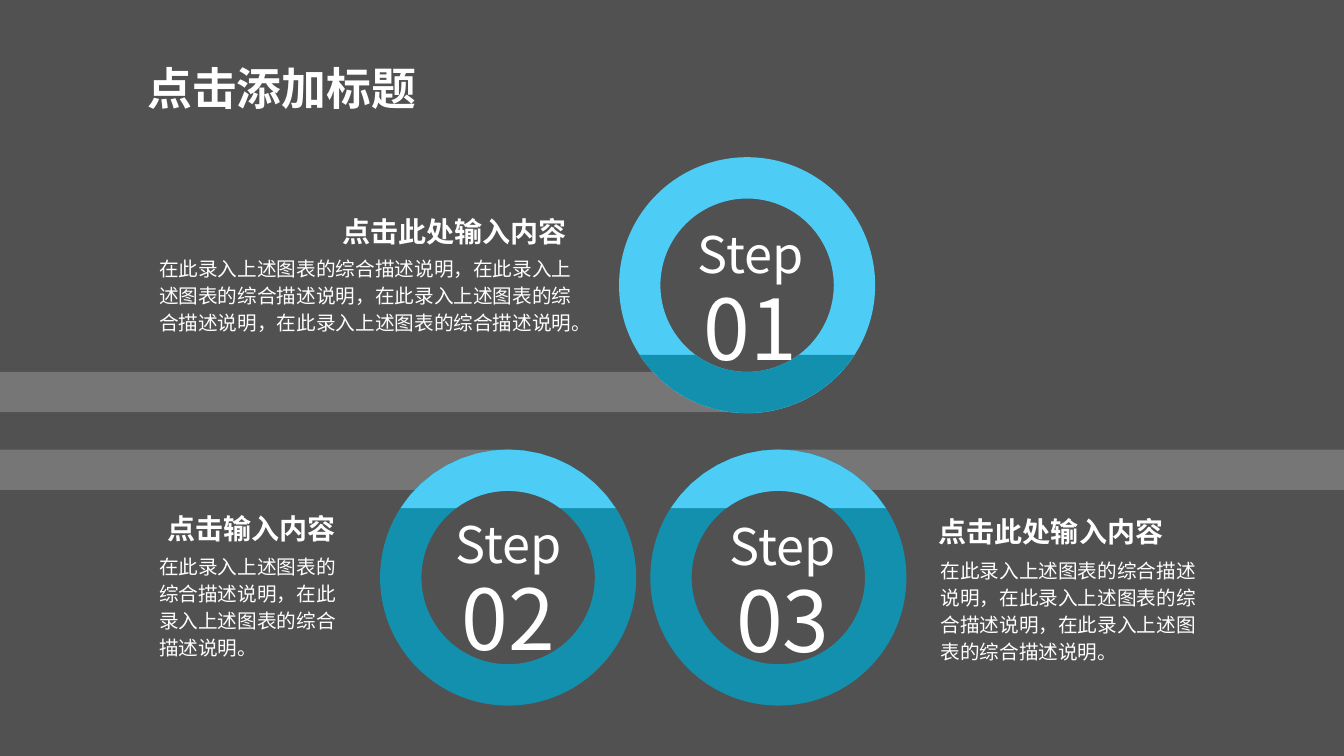
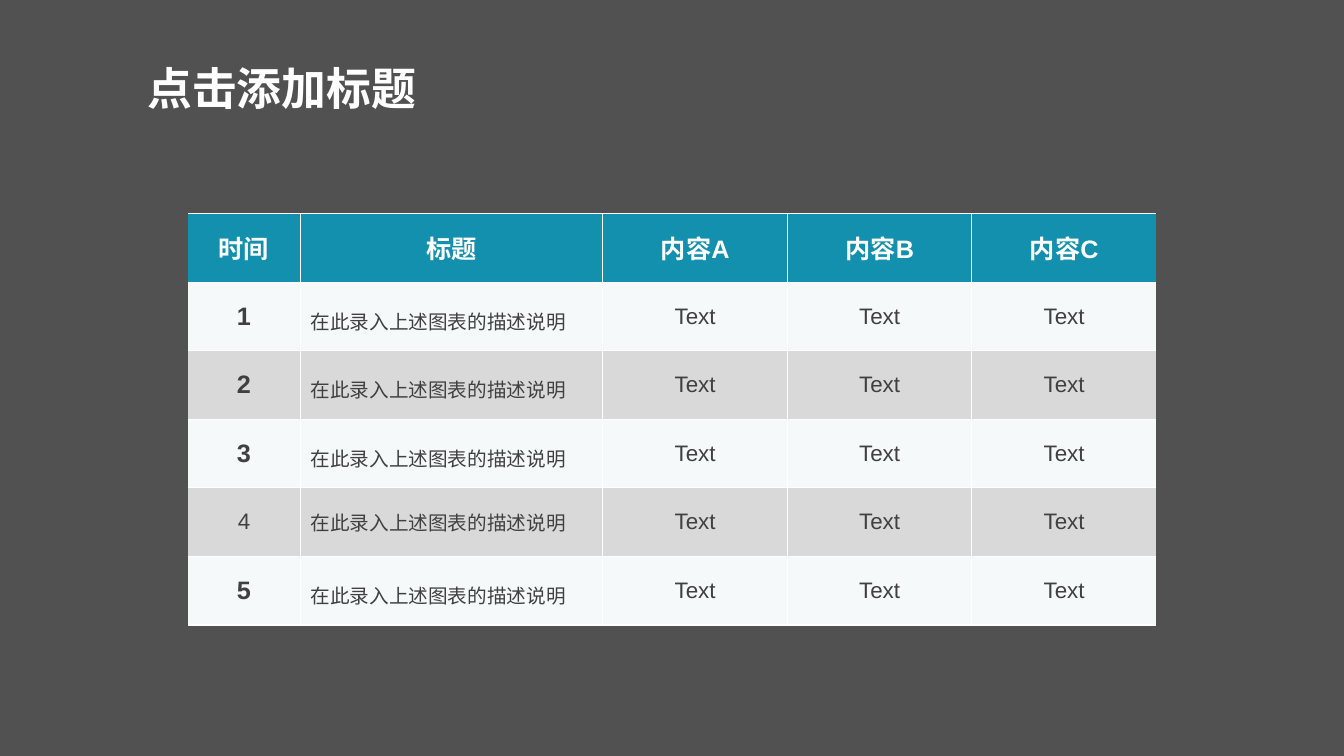
from dataclasses import dataclass
from math import asin, cos, degrees, radians, sin

from lxml import etree
from pptx import Presentation
from pptx.dml.color import RGBColor
from pptx.enum.shapes import MSO_SHAPE
from pptx.enum.text import MSO_ANCHOR, MSO_AUTO_SIZE, PP_ALIGN
from pptx.oxml.ns import qn
from pptx.util import Inches, Pt

RECT, DONUT = MSO_SHAPE.RECTANGLE, MSO_SHAPE.DONUT
LEFT, MID, RIGHT = PP_ALIGN.LEFT, PP_ALIGN.CENTER, PP_ALIGN.RIGHT
TOP, CENTRE = MSO_ANCHOR.TOP, MSO_ANCHOR.MIDDLE
FIXED = MSO_AUTO_SIZE.NONE


@dataclass(frozen=True)
class Theme:
    back: RGBColor = RGBColor.from_string("515151")
    band: RGBColor = RGBColor.from_string("808080")
    light: RGBColor = RGBColor.from_string("4DCDF5")
    dark: RGBColor = RGBColor.from_string("1390AD")
    white: RGBColor = RGBColor.from_string("FFFFFF")
    ink: RGBColor = RGBColor.from_string("404040")
    pale: RGBColor = RGBColor.from_string("F5F9F9")
    grey: RGBColor = RGBColor.from_string("D9D9D9")
    sans: str = "Arial"
    han: str = "Noto Sans CJK SC"
    title: Pt = Pt(32)
    head: Pt = Pt(20)
    body: Pt = Pt(14)
    word: Pt = Pt(36)
    digit: Pt = Pt(60)
    key: Pt = Pt(18)
    cell: Pt = Pt(16)


T = Theme()


def write(frame, lines, align=LEFT, color=T.white, anchor=TOP):
    """Fill a text frame; each line is (text, line spacing, font values)."""
    frame.vertical_anchor = anchor
    for i, (text, space, fmt) in enumerate(lines):
        para = frame.paragraphs[0] if i == 0 else frame.add_paragraph()
        para.alignment, para.line_spacing = align, space
        run = para.add_run()
        run.text = text
        run.font.color.rgb = color
        for name, value in fmt.items():
            setattr(run.font, name, value)
        asian = etree.SubElement(run.font._element, qn("a:ea"))
        asian.set("typeface", T.han)


def paint(shape, color):
    """Give a shape a flat fill with no line or shadow."""
    shape.shadow.inherit = False
    shape.fill.solid()
    shape.fill.fore_color.rgb = color
    shape.line.fill.background()


prs = Presentation()
prs.slide_width, prs.slide_height = Inches(13.33), Inches(7.5)

# Shared background, title place and title style
back = prs.slide_master.background.fill
back.solid()
back.fore_color.rgb = T.back
plain = prs.slide_layouts[5]
steps, grid = [prs.slides.add_slide(plain) for _ in range(2)]
for slide in (steps, grid):
    title = slide.shapes.title
    title.left, title.top = Inches(1.36), Inches(0.55)
    title.width, title.height = Inches(2.89), Inches(0.64)
    title.text_frame.word_wrap = False
    title.text_frame.auto_size = FIXED
    write(title.text_frame,
          [("点击添加标题", 1.0, dict(size=T.title, bold=True, name=T.sans))],
          anchor=CENTRE)

# Bands: left, top, width
for x, y, w in ((0, 3.69, 7.37), (0, 4.46, 5.03), (7.64, 4.46, 5.69)):
    band = steps.shapes.add_shape(RECT, Inches(x), Inches(y), Inches(w), Inches(0.4))
    paint(band, T.band)
    tint = band._element.spPr.find(".//" + qn("a:srgbClr"))
    etree.SubElement(tint, qn("a:alpha")).set("val", "80000")

# Rings with a cap beyond a level chord: centre, cap side, colours, label place
OUTER, INNER, CUT, PARTS = 1.27, 0.86, 0.69, 16
rings = (
    ("01", 7.41, 2.83, 1, T.light, T.dark, 6.81, 2.18),
    ("02", 5.04, 5.73, -1, T.dark, T.light, 4.41, 5.06),
    ("03", 7.72, 5.73, -1, T.dark, T.light, 7.13, 5.08),
)
for digits, x, y, side, main, tip, left, top in rings:
    ring = steps.shapes.add_shape(DONUT, Inches(x - OUTER), Inches(y - OUTER),
                                  Inches(2 * OUTER), Inches(2 * OUTER))
    ring.adjustments[0] = (OUTER - INNER) / (2 * OUTER)
    paint(ring, main)
    # Cap outline: along the outer arc, then back along the inner one
    points = []
    for radius, way in ((OUTER, 1), (INNER, -1)):
        first = degrees(asin(CUT / radius))
        sweep = 180 - 2 * first
        for i in range(PARTS + 1)[::way]:
            turn = radians(first + sweep * i / PARTS)
            points.append((Inches(x + radius * cos(turn)),
                           Inches(y + side * radius * sin(turn))))
    edge = steps.shapes.build_freeform(*points[0])
    edge.add_line_segments(points[1:], close=True)
    paint(edge.convert_to_shape(), tip)
    label = steps.shapes.add_textbox(Inches(left), Inches(top), Inches(1.27), Inches(1.56))
    label.text_frame.word_wrap = False
    write(label.text_frame,
          [("Step", Pt(42), dict(size=T.word, name=T.han)),
           (digits, Pt(67), dict(size=T.digit, name=T.han))], MID)

# Headings and descriptions beside the rings
HEAD = (Pt(26), dict(size=T.head, bold=True, name=T.han))
BODY = (Pt(19.3), dict(size=T.body, name=T.han))
LINE = "在此录入上述图表的综合描述说明"
notes = (
    ("点击此处输入内容", HEAD, RIGHT, 2.89, 2.05, 2.83, 0.44),
    ("，".join([LINE] * 4) + "。", BODY, LEFT, 1.48, 2.46, 4.34, 0.91),
    ("点击此处输入内容", HEAD, MID, 9.01, 5.03, 2.83, 0.44),
    ("，".join([LINE] * 3) + "。", BODY, LEFT, 9.23, 5.46, 2.83, 1.18),
    ("点击输入内容", HEAD, MID, 1.08, 5, 2.83, 0.44),
    ("，".join([LINE] * 2) + "。", BODY, LEFT, 1.48, 5.42, 2.03, 1.18),
)
for text, style, align, *place in notes:
    box = steps.shapes.add_textbox(*[Inches(v) for v in place])
    box.text_frame.word_wrap = True
    write(box.text_frame, [(text, *style)], align)

# Table
rows = [["时间", "标题", "内容A", "内容B", "内容C"]]
rows += [[str(n), "在此录入上述图表的描述说明"] + ["Text"] * 3 for n in range(1, 6)]
widths = (1.12, 3, 1.83, 1.83, 1.83)
table = grid.shapes.add_table(len(rows), len(widths), Inches(1.86), Inches(2.12),
                              Inches(sum(widths)), Inches(0.68 * len(rows))).table
table.horz_banding = False
for col, width in zip(table.columns, widths):
    col.width = Inches(width)
last, end = len(rows) - 1, len(widths) - 1
for r, row in enumerate(rows):
    table.rows[r].height = Inches(0.68)
    for c, text in enumerate(row):
        cell = table.cell(r, c)
        # Cell borders: opacity in percent, 0 for none
        edges = {"L": 30 if c else 0, "R": 30 if c < end else 0,
                 "T": 30 if r else 80, "B": 30 if r < last else 80}
        for edge, alpha in edges.items():
            line = etree.SubElement(cell._tc.get_or_add_tcPr(), qn("a:ln" + edge), w="12700")
            if not alpha:
                etree.SubElement(line, qn("a:noFill"))
                continue
            solid = etree.SubElement(line, qn("a:solidFill"))
            tint = etree.SubElement(solid, qn("a:srgbClr"), val=str(T.white))
            etree.SubElement(tint, qn("a:alpha"), val=str(alpha * 1000))
        cell.fill.solid()
        cell.fill.fore_color.rgb = T.dark if r == 0 else T.pale if r % 2 else T.grey
        # Cell text: row 4 is set lighter than the others
        fmt = dict(size=T.cell, bold=False, name=T.sans)
        space, align = 1.0, MID
        if r == 0 or (c == 0 and r != 4):
            fmt.update(size=T.key, bold=True)
        elif c == 1:
            fmt.update(size=T.body, name=T.han)
            space, align = 1.0 if r == 4 else 1.3, LEFT
        write(cell.text_frame, [(text, space, fmt)], align,
              T.ink if r else T.white)
        cell.vertical_anchor = CENTRE

prs.save("out.pptx")
